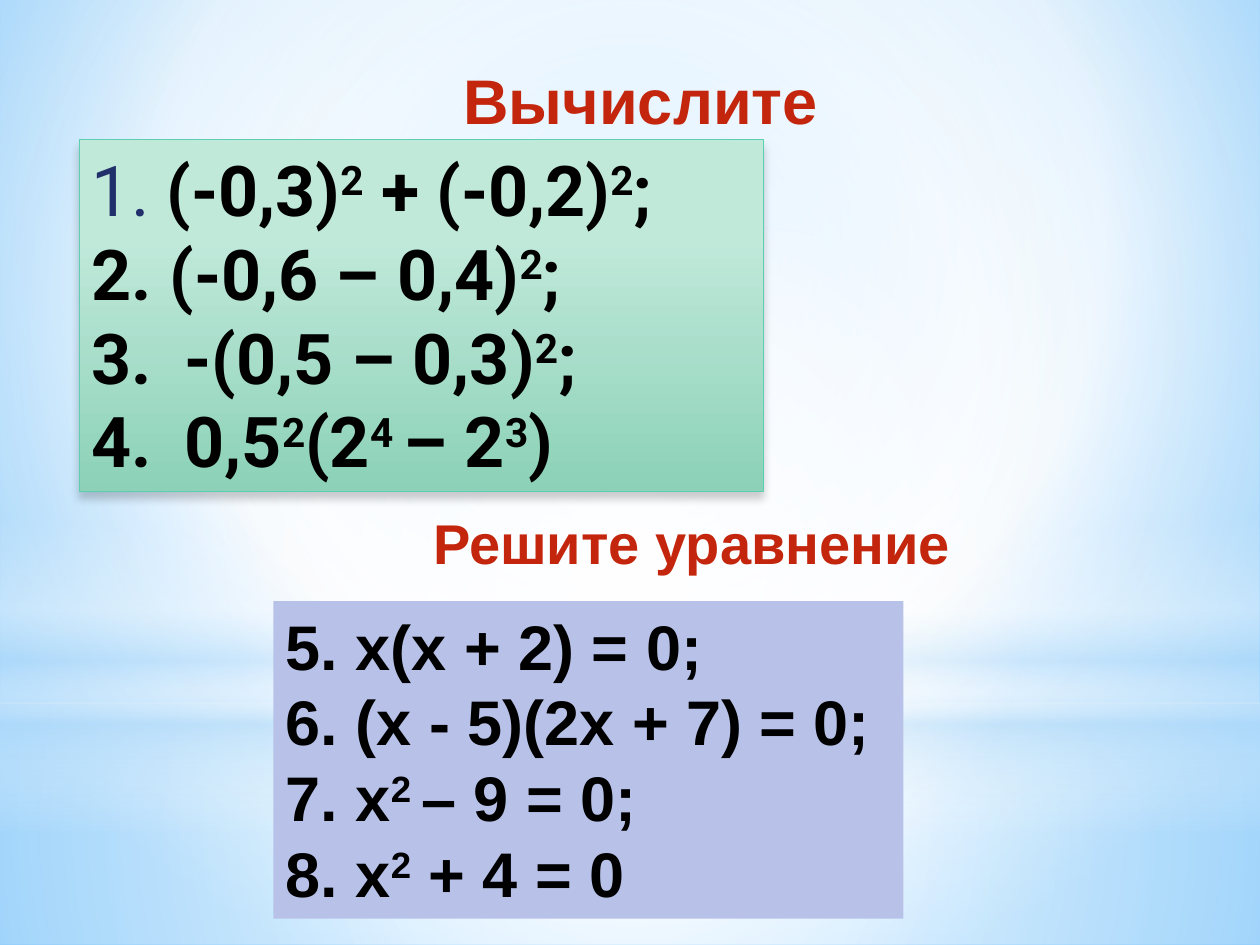
from dataclasses import dataclass

import pptx
import pptx.dml.color
import pptx.enum.shapes
import pptx.enum.text
import pptx.oxml
import pptx.oxml.ns
import pptx.util
from pptx.util import Inches

qn = pptx.oxml.ns.qn
RECTANGLE = pptx.enum.shapes.MSO_SHAPE.RECTANGLE
OVAL = pptx.enum.shapes.MSO_SHAPE.OVAL


@dataclass(frozen=True)
class Theme:
    heading: str = "C3260C"
    ink: str = "000000"
    navy: str = "21306A"
    white: str = "FFFFFF"
    haze: str = "B4DCFA"
    sky: str = "9ED5FF"
    deep_sky: str = "5BB9FF"
    mint: str = "C0E9DA"
    dark_mint: str = "8CD1B8"
    mint_edge: str = "5DCEAF"
    lilac: str = "B8C2E9"
    text_font: str = "Arial"
    sum_font: str = "Roboto"
    title_size: int = 36
    subtitle_size: int = 32
    sum_size: int = 40
    equation_size: int = 36


THEME = Theme()
CENTER = (50, 50, 50, 50)


def rgb(color):
    return pptx.dml.color.RGBColor.from_string(color)


def drawing_xml(tag, body):
    space = pptx.oxml.ns.nsdecls("a")
    return pptx.oxml.parse_xml(f"<a:{tag} {space}>{body}</a:{tag}>")


def paint_gradient(fill, properties, stops, focus=None):
    fill.solid()
    marks = "".join(
        f'<a:gs pos="{place * 1000}"><a:srgbClr val="{color}">'
        f'<a:alpha val="{opacity * 1000}"/></a:srgbClr></a:gs>'
        for place, color, opacity in stops
    )
    if focus:
        left, top, right, bottom = (edge * 1000 for edge in focus)
        direction = (
            f'<a:path path="circle"><a:fillToRect l="{left}" t="{top}" '
            f'r="{right}" b="{bottom}"/></a:path>'
        )
    else:
        direction = '<a:lin ang="5400000" scaled="0"/>'
    gradient = drawing_xml("gradFill", f"<a:gsLst>{marks}</a:gsLst>{direction}")
    properties.replace(properties.find(qn("a:solidFill")), gradient)


def add_panel(page, kind, area):
    panel = page.shapes.add_shape(kind, *map(Inches, area))
    panel.shadow.inherit = False
    panel.line.fill.background()
    return panel


def add_backdrop(page):
    fill = page.background.fill
    fill.solid()
    properties = page.element.find(".//" + qn("p:bgPr"))
    sky = ((0, THEME.sky, 100), (60, THEME.white, 100), (100, THEME.deep_sky, 100))
    paint_gradient(fill, properties, sky, (20, 10, 20, 60))

    white, haze = THEME.white, THEME.haze
    band = (
        (0, white, 0), (29, white, 30), (45, haze, 40),
        (55, white, 26), (65, haze, 60), (100, white, 0),
    )
    layers = (
        (RECTANGLE, (0, 5.58, 10, 1.92),
         ((0, white, 91), (37, white, 76), (100, haze, 79)), CENTER),
        (RECTANGLE, (0, 0, 10, 5.58),
         ((0, white, 89), (48, white, 62), (100, haze, 79)), CENTER),
        (RECTANGLE, (0, 4.12, 10, 2.5), band, None),
        (OVAL, (0, 1.75, 10, 5.58), ((0, white, 100), (56, white, 0)), CENTER),
    )
    for kind, area, stops, focus in layers:
        layer = add_panel(page, kind, area)
        paint_gradient(layer.fill, layer.element.spPr, stops, focus)


def set_type(para, font, size, color):
    para.font.name = font
    para.font.size = pptx.util.Pt(size)
    para.font.bold = True
    para.font.color.rgb = rgb(color)


def add_powers(para, formula):
    for position, piece in enumerate(formula.split("|")):
        span = para.add_run()
        span.text = piece
        if position % 2:
            span.font._element.set("baseline", "30000")


def prepare_lines(box, count):
    frame = box.text_frame
    frame.word_wrap = True
    frame.auto_size = pptx.enum.text.MSO_AUTO_SIZE.SHAPE_TO_FIT_TEXT
    frame.vertical_anchor = pptx.enum.text.MSO_ANCHOR.TOP
    for _ in range(count - 1):
        frame.add_paragraph()
    for para in frame.paragraphs:
        para.alignment = pptx.enum.text.PP_ALIGN.LEFT
    return frame.paragraphs


def add_heading(page, area, wording, size):
    box = page.shapes.add_textbox(*map(Inches, area))
    para = prepare_lines(box, 1)[0]
    box.text_frame.word_wrap = False
    para.add_run().text = wording
    set_type(para, THEME.text_font, size, THEME.heading)


def add_sums(page, area, sums):
    box = add_panel(page, RECTANGLE, area)
    stops = ((28, THEME.mint, 100), (100, THEME.dark_mint, 100))
    paint_gradient(box.fill, box.element.spPr, stops)
    box.line.color.rgb = rgb(THEME.mint_edge)
    box.line.width = pptx.util.Pt(0.75)
    effects = box.element.spPr.find(qn("a:effectLst"))
    shadow = drawing_xml(
        "outerShdw",
        f'<a:srgbClr val="{THEME.ink}"><a:alpha val="20000"/></a:srgbClr>',
    )
    for name, value in (
        ("blurRad", pptx.util.Pt(5)), ("dist", pptx.util.Pt(4)),
        ("dir", 5400000), ("rotWithShape", 0),
    ):
        shadow.set(name, str(value))
    effects.append(shadow)

    paras = prepare_lines(box, len(sums))
    for para, (formula, indent) in zip(paras, sums):
        properties = para._p.get_or_add_pPr()
        properties.set("marL", str(Inches(indent)))
        properties.set("indent", str(-Inches(indent)))
        number = drawing_xml("buAutoNum", "")
        number.set("type", "arabicPeriod")
        properties.append(number)
        set_type(para, THEME.sum_font, THEME.sum_size, THEME.ink)
        lead = para.add_run()
        lead.text = " "
        if para._p is paras[0]._p:
            lead.font.bold = False
            lead.font.color.rgb = rgb(THEME.navy)
        add_powers(para, formula)


def add_equations(page, area, equations):
    box = add_panel(page, RECTANGLE, area)
    box.fill.solid()
    box.fill.fore_color.rgb = rgb(THEME.lilac)
    for para, equation in zip(prepare_lines(box, len(equations)), equations):
        add_powers(para, equation)
        set_type(para, THEME.text_font, THEME.equation_size, THEME.ink)


def main():
    deck = pptx.Presentation()
    deck.slide_width, deck.slide_height = Inches(10), Inches(7.5)
    page = deck.slides.add_slide(deck.slide_layouts[6])
    add_backdrop(page)
    add_heading(page, (3.58, 0.44, 3.18, 0.71), "Вычислите", THEME.title_size)
    add_sums(page, (0.63, 1.11, 5.43, 2.79), (
        ("(-0,3)|2| + (-0,2)|2|;", 0.38),
        ("(-0,6 – 0,4)|2|;", 0.38),
        ("-(0,5 – 0,3)|2|;", 0.6),
        ("0,5|2|(2|4 |– 2|3|)", 0.6),
    ))
    add_heading(page, (3.34, 3.99, 4.46, 0.64), "Решите уравнение", THEME.subtitle_size)
    add_equations(page, (2.17, 4.77, 5, 2.52), (
        "5. x(х + 2) = 0;",
        "6. (х - 5)(2х + 7) = 0;",
        "7. x|2 |– 9 = 0;",
        "8. x|2| + 4 = 0",
    ))
    deck.save("out.pptx")


if __name__ == "__main__":
    main()
